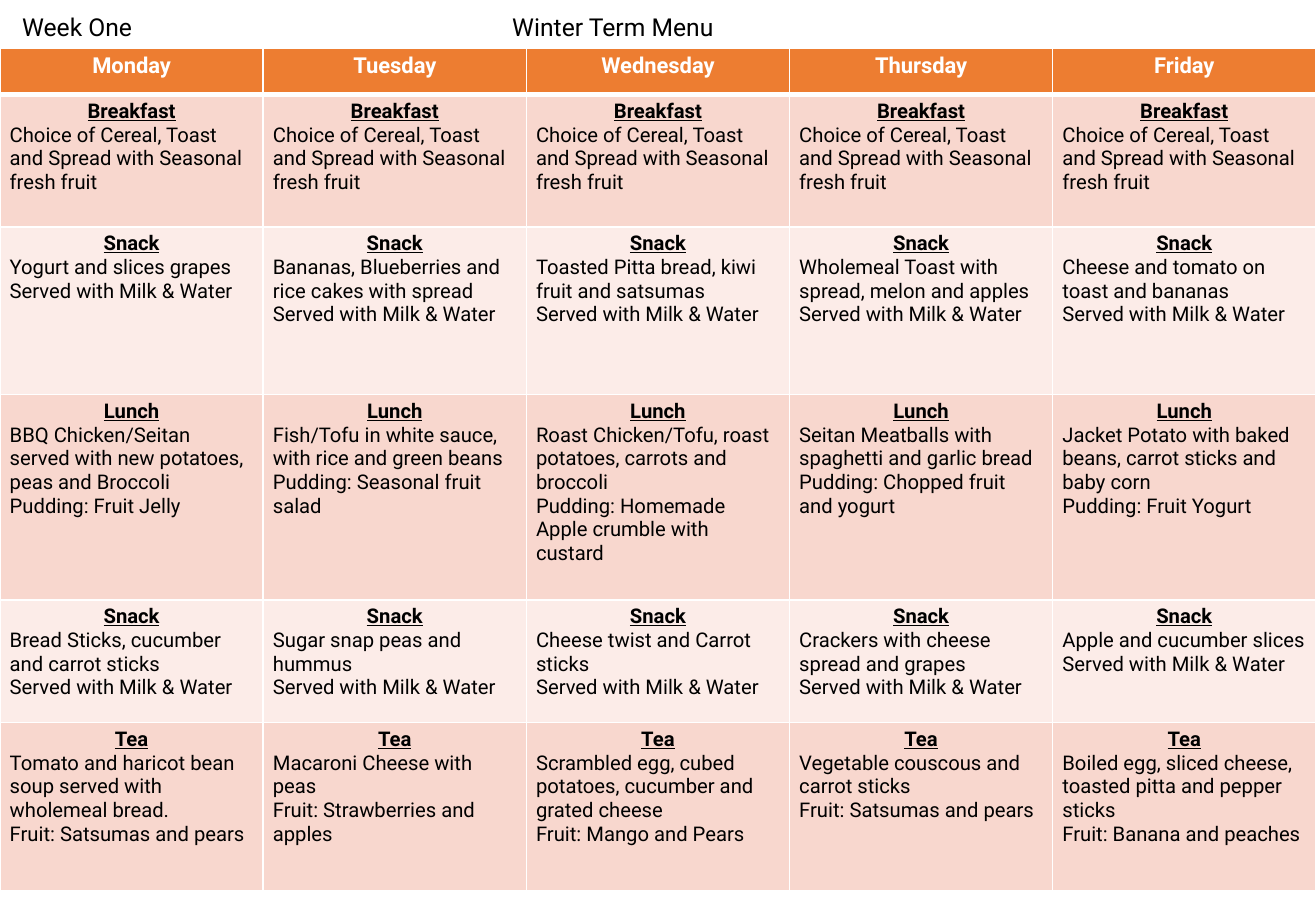
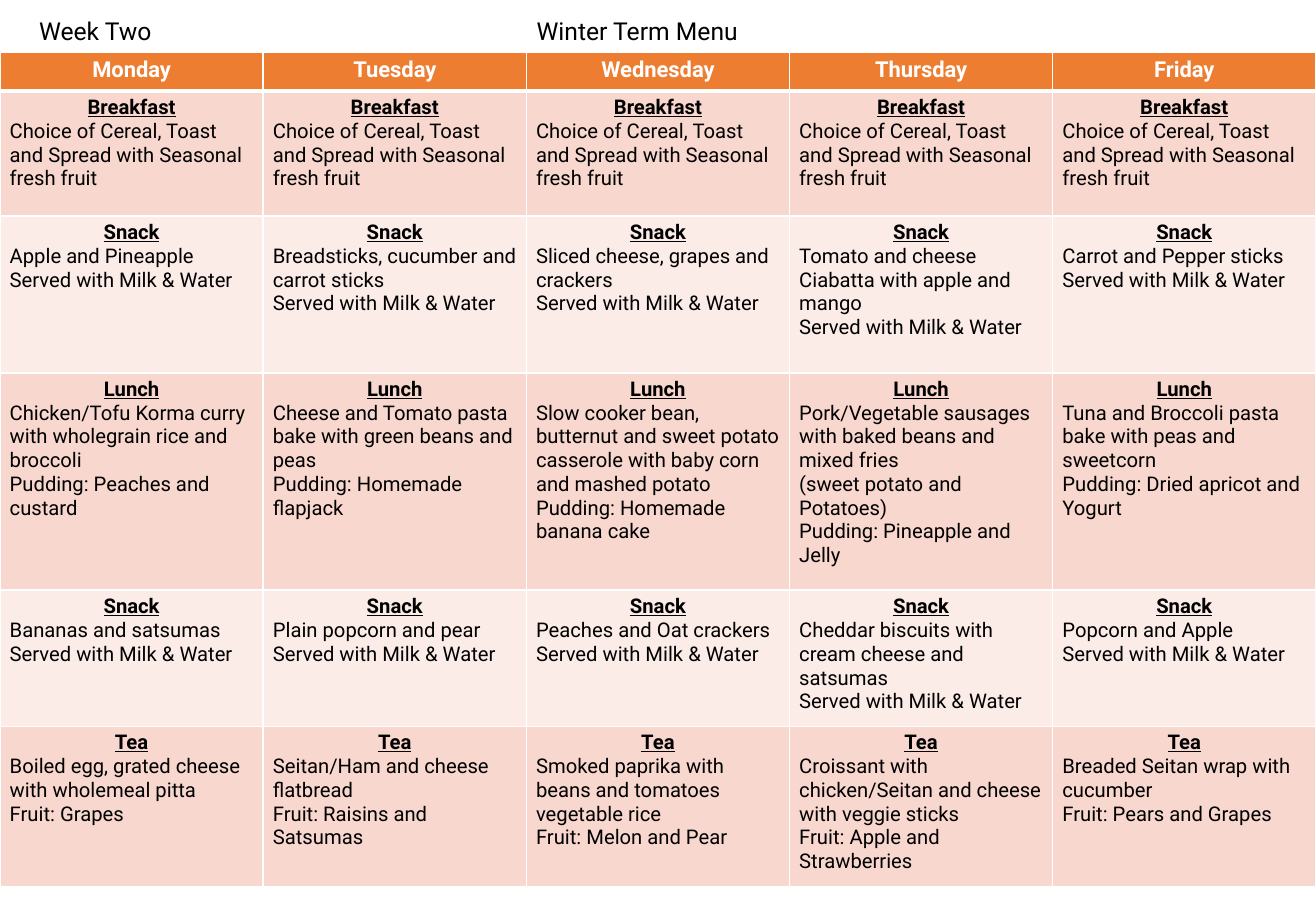
from dataclasses import dataclass

from lxml.etree import SubElement as Sub
from pptx import Presentation as Deck
from pptx.dml.color import RGBColor as RGB
from pptx.enum.text import MSO_AUTO_SIZE as Fit, PP_ALIGN as Align
from pptx.oxml.ns import qn
from pptx.util import Inches, Pt


@dataclass(frozen=True)
class Theme:
    font: str = "Roboto"
    white: str = "FFFFFF"
    black: str = "000000"
    head: str = "ED7D31"
    dark: str = "F8D7CE"
    light: str = "FCECE8"
    title: float = 14.6
    day: float = 13
    body: float = 12
    thin: float = 1
    thick: float = 3


THEME = Theme()
WIDE, HIGH = 10.83, 7.5
DAYS = ["Monday", "Tuesday", "Wednesday", "Thursday", "Friday"]
MEALS = ["Breakfast", "Snack", "Lunch", "Snack", "Tea"]
CEREAL = ["Choice of Cereal, Toast and Spread with Seasonal fresh fruit"]
DRINK = "Served with Milk & Water"


@dataclass(frozen=True)
class Week:
    name: str
    left: float
    mid: float
    top: float
    rows: list
    snack: list
    lunch: list
    late: list
    tea: list

    def menu(self):
        """Return, meal by meal, the lines of text for each day."""
        first, late = ([[food, DRINK] for food in foods]
                       for foods in (self.snack, self.late))
        return [[CEREAL] * len(DAYS), first, self.lunch, late, self.tea]


WEEKS = [
    Week(
        name="Week One", left=-0.6, mid=3.81, top=0.05,
        rows=[0.38, 1.09, 1.38, 1.69, 1.01, 1.38],
        snack=[
            "Yogurt and slices grapes",
            "Bananas, Blueberries and rice cakes with spread",
            "Toasted Pitta bread, kiwi fruit and satsumas",
            "Wholemeal Toast with spread, melon and apples",
            "Cheese and tomato on toast and bananas",
        ],
        lunch=[
            ["BBQ Chicken/Seitan served with new potatoes, peas and Broccoli",
             "Pudding: Fruit Jelly"],
            ["Fish/Tofu in white sauce, with rice and green beans",
             "Pudding: Seasonal fruit salad"],
            ["Roast Chicken/Tofu, roast potatoes, carrots and broccoli",
             "Pudding: Homemade Apple crumble with custard"],
            ["Seitan Meatballs with spaghetti and garlic bread",
             "Pudding: Chopped fruit and yogurt"],
            ["Jacket Potato with baked beans, carrot sticks and baby corn",
             "Pudding: Fruit Yogurt"],
        ],
        late=[
            "Bread Sticks, cucumber and carrot sticks",
            "Sugar snap peas and hummus",
            "Cheese twist and Carrot sticks",
            "Crackers with cheese spread and grapes",
            "Apple and cucumber slices",
        ],
        tea=[
            ["Tomato and haricot bean soup served with wholemeal bread.",
             "Fruit: Satsumas and pears"],
            ["Macaroni Cheese with peas", "Fruit: Strawberries and apples"],
            ["Scrambled egg, cubed potatoes, cucumber and grated cheese",
             "Fruit: Mango and Pears"],
            ["Vegetable couscous and carrot sticks",
             "Fruit: Satsumas and pears"],
            ["Boiled egg, sliced cheese, toasted pitta and pepper sticks",
             "Fruit: Banana and peaches"],
        ],
    ),
    Week(
        name="Week Two", left=-0.45, mid=4.01, top=0.08,
        rows=[0.32, 1.03, 1.29, 1.79, 1.12, 1.32],
        snack=[
            "Apple and Pineapple",
            "Breadsticks, cucumber and carrot sticks",
            "Sliced cheese, grapes and crackers",
            "Tomato and cheese Ciabatta with apple and mango",
            "Carrot and Pepper sticks",
        ],
        lunch=[
            ["Chicken/Tofu Korma curry with wholegrain rice and broccoli",
             "Pudding: Peaches and custard"],
            ["Cheese and Tomato pasta bake with green beans and peas",
             "Pudding: Homemade flapjack"],
            ["Slow cooker bean, butternut and sweet potato casserole with "
             "baby corn and mashed potato",
             "Pudding: Homemade banana cake"],
            ["Pork/Vegetable sausages with baked beans and mixed fries",
             "(sweet potato and Potatoes)",
             "Pudding: Pineapple and Jelly"],
            ["Tuna and Broccoli pasta bake with peas and sweetcorn",
             "Pudding: Dried apricot and Yogurt"],
        ],
        late=[
            "Bananas and satsumas",
            "Plain popcorn and pear",
            "Peaches and Oat crackers",
            "Cheddar biscuits with cream cheese and satsumas",
            "Popcorn and Apple",
        ],
        tea=[
            ["Boiled egg, grated cheese with wholemeal pitta",
             "Fruit: Grapes"],
            ["Seitan/Ham and cheese flatbread",
             "Fruit: Raisins and Satsumas"],
            ["Smoked paprika with beans and tomatoes vegetable rice",
             "Fruit: Melon and Pear"],
            ["Croissant with chicken/Seitan and cheese with veggie sticks",
             "Fruit: Apple and Strawberries"],
            ["Breaded Seitan wrap with cucumber", "Fruit: Pears and Grapes"],
        ],
    ),
]


def write(para, text, size=THEME.body, color=THEME.black, bold=False,
          line=False, align=Align.LEFT):
    para.alignment = align
    run = para.add_run()
    run.text = text
    font = run.font
    font.name, font.size = THEME.font, Pt(size)
    font.bold, font.underline = bold, line
    font.color.rgb = RGB.from_string(color)


def title(slide, text, left, top):
    box = slide.shapes.add_textbox(
        Inches(left), Inches(top), Inches(2.47), Inches(0.35))
    frame = box.text_frame
    frame.word_wrap = True
    frame.auto_size = Fit.SHAPE_TO_FIT_TEXT
    write(frame.paragraphs[0], text, size=THEME.title, align=Align.CENTER)


def edge(cell, side, width):
    line = Sub(cell._tc.get_or_add_tcPr(), qn("a:ln" + side), w=str(Pt(width)))
    Sub(Sub(line, qn("a:solidFill")), qn("a:srgbClr"), val=THEME.white)


def style(cell, color, top=THEME.thin, base=THEME.thin):
    """Set margins, white edges and fill; the edges must come first."""
    cell.margin_left = cell.margin_right = Inches(0.08)
    cell.margin_top = cell.margin_bottom = Inches(0.04)
    for side, width in zip("LRTB", (THEME.thin, THEME.thin, top, base)):
        edge(cell, side, width)
    cell.fill.solid()
    cell.fill.fore_color.rgb = RGB.from_string(color)


def grid(slide, week):
    table = slide.shapes.add_table(
        len(week.rows), len(DAYS), 0, Inches(week.top + 0.35),
        Inches(WIDE), Inches(sum(week.rows))).table
    table.horz_banding = False
    for col in table.columns:
        col.width = Inches(WIDE / len(DAYS))
    for row, high in zip(table.rows, week.rows):
        row.height = Inches(high)

    for col, day in enumerate(DAYS):
        cell = table.cell(0, col)
        style(cell, THEME.head, base=THEME.thick)
        write(cell.text_frame.paragraphs[0], day, size=THEME.day,
              color=THEME.white, bold=True, align=Align.CENTER)

    for row, (meal, foods) in enumerate(zip(MEALS, week.menu()), 1):
        color = THEME.dark if row % 2 else THEME.light
        top = THEME.thick if row == 1 else THEME.thin
        for col, lines in enumerate(foods):
            cell = table.cell(row, col)
            style(cell, color, top=top)
            frame = cell.text_frame
            write(frame.paragraphs[0], meal, bold=True, line=True,
                  align=Align.CENTER)
            for text in lines:
                write(frame.add_paragraph(), text)


def main():
    deck = Deck()
    deck.slide_width, deck.slide_height = Inches(WIDE), Inches(HIGH)
    for week in WEEKS:
        slide = deck.slides.add_slide(deck.slide_layouts[6])
        grid(slide, week)
        title(slide, "Winter Term Menu", week.mid, week.top)
        title(slide, week.name, week.left, week.top)
    deck.save("out.pptx")


if __name__ == "__main__":
    main()
